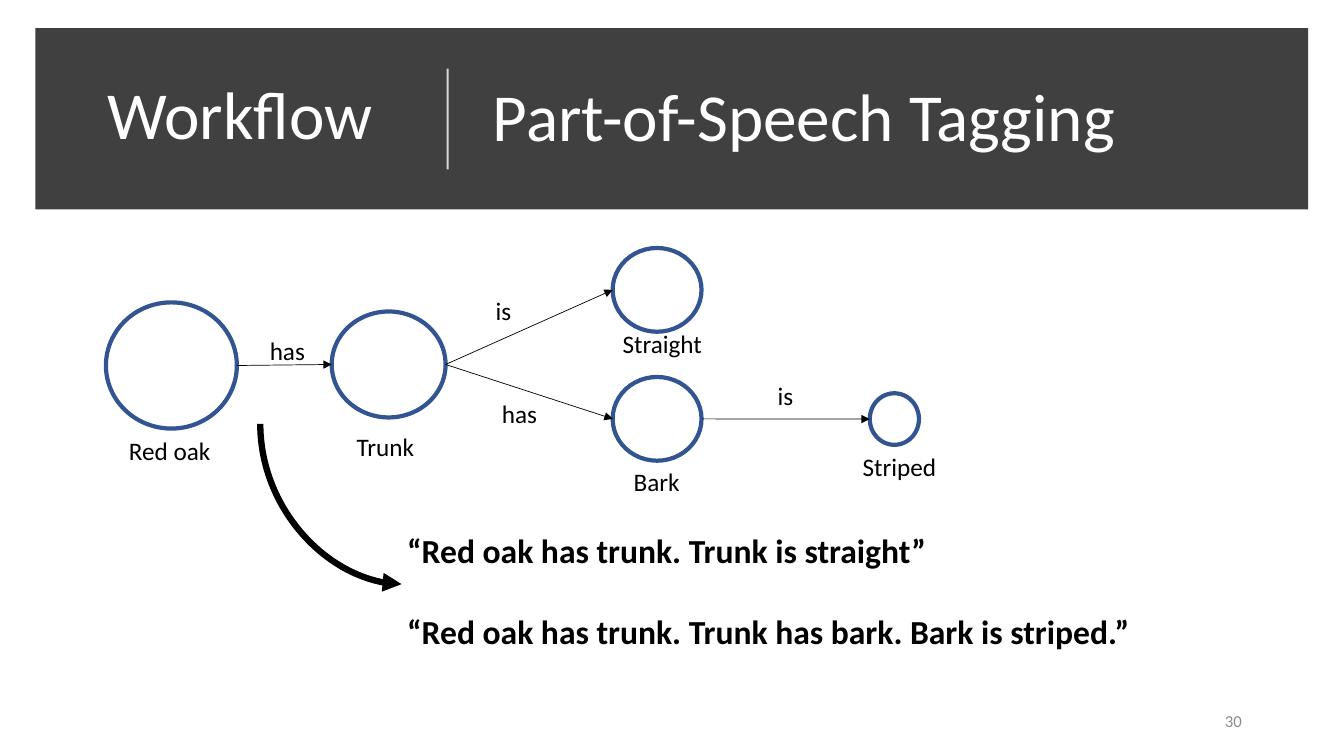
from lxml.etree import SubElement
from pptx import Presentation
from pptx.dml.color import RGBColor
from pptx.enum.shapes import MSO_CONNECTOR as Link, MSO_SHAPE as Shape
from pptx.enum.text import MSO_ANCHOR as Anchor, MSO_AUTO_SIZE as AutoSize, PP_ALIGN as Align
from pptx.oxml.ns import qn
from pptx.util import Cm, Pt

BLACK = RGBColor(0x00, 0x00, 0x00)
WHITE = RGBColor(0xFF, 0xFF, 0xFF)
CHARCOAL = RGBColor(0x40, 0x40, 0x40)
GREY = RGBColor(0x8C, 0x8C, 0x8C)
BLUE = RGBColor(0x32, 0x54, 0x91)

NODES = {
    "Red oak": ((2.67, 7.62, 3.3, 3.18), (3.0, 10.85, 2.59)),
    "Trunk": ((8.36, 7.85, 2.87, 2.67), (8.74, 10.74, 1.98)),
    "Straight": ((15.44, 6.25, 2.24, 2.11), (15.44, 8.15, 2.54)),
    "Bark": ((15.44, 9.5, 2.24, 2.11), (15.72, 11.63, 1.68)),
    "Striped": ((21.92, 9.91, 1.24, 1.3), (21.49, 11.25, 2.39)),
}
RELATIONS = [
    ("Red oak", "has", "Trunk", (6.55, 8.33)),
    ("Trunk", "is", "Straight", (12.24, 7.32)),
    ("Trunk", "has", "Bark", (12.4, 9.91)),
    ("Bark", "is", "Striped", (19.35, 9.47)),
]
SENTENCES = [
    "“Red oak has trunk. Trunk is straight”",
    "“Red oak has trunk. Trunk has bark. Bark is striped.”",
]


def style_paragraph(paragraph, size, color, bold=False):
    """Apply the slide's typeface to a paragraph."""
    font = paragraph.font
    font.name, font.size, font.bold = "Calibri", Pt(size), bold
    font.color.rgb = color


def add_text(slide, text, box, size=18, color=BLACK, wrap=True, bold=False):
    """Add a text box with one paragraph per line and return its frame."""
    frame = slide.shapes.add_textbox(*map(Cm, box)).text_frame
    frame.word_wrap = wrap
    frame.text = text
    for paragraph in frame.paragraphs:
        style_paragraph(paragraph, size, color, bold)
    return frame


def add_line(slide, start, end, color, width, kind=Link.STRAIGHT, arrow=True):
    """Add a shadowless line, with an arrowhead at its end if wanted."""
    line = slide.shapes.add_connector(kind, *map(Cm, start + end))
    line.line.color.rgb = color
    line.line.width = Pt(width)
    if arrow:
        SubElement(line.line._get_or_add_ln(), qn("a:tailEnd"), type="triangle")
    SubElement(line.element.spPr, qn("a:effectLst"))
    return line


def add_header(slide):
    """Add the dark band with the section name, divider and title."""
    band = slide.shapes.add_shape(Shape.RECTANGLE, Cm(0.89), Cm(0.71), Cm(32.08), Cm(4.57))
    band.shadow.inherit = False
    band.fill.solid()
    band.fill.fore_color.rgb = CHARCOAL
    band.line.fill.background()

    title = slide.shapes.title
    band.element.addnext(title.element)
    title.left, title.top, title.width, title.height = map(Cm, (12.17, 1.27, 19.38, 3.51))
    title.text_frame.text = "Part-of-Speech Tagging"
    style_paragraph(title.text_frame.paragraphs[0], 48, WHITE)
    section = add_text(slide, "Workflow", (2.46, 1.22, 9, 3.51), 48, WHITE)
    for frame in (title.text_frame, section):
        frame.vertical_anchor = Anchor.MIDDLE
        frame.auto_size = AutoSize.NONE
        frame.paragraphs[0].alignment = Align.LEFT
        frame.paragraphs[0].line_spacing = 0.9

    divider = add_line(slide, (11.28, 4.27), (11.28, 1.73), WHITE, 1.5, arrow=False)
    color = divider.element.spPr.find(".//" + qn("a:srgbClr"))
    SubElement(color, qn("a:alpha"), val="80000")


def add_node(slide, name, circle, label):
    """Add a concept circle and its label."""
    concept = slide.shapes.add_shape(Shape.OVAL, *map(Cm, circle))
    concept.shadow.inherit = False
    concept.fill.background()
    concept.line.color.rgb = BLUE
    concept.line.width = Pt(3)
    add_text(slide, name, label + (1.02,), wrap=False)


def add_relation(slide, source, verb, target, label):
    """Add an arrow between two concepts with its verb."""
    left, top, width, height = NODES[source][0]
    end_left, end_top, _, end_height = NODES[target][0]
    start = (left + width, top + height / 2)
    add_line(slide, start, (end_left, end_top + end_height / 2), BLACK, 0.5)
    add_text(slide, verb, label + (2.11, 1.02))


def add_curved_arrow(slide):
    """Add the thick quarter-turn arrow leading to the sentences."""
    curve = add_line(slide, (10.36, 10.92), (6.32, 14.48), BLACK, 4.5, Link.CURVE)
    properties = curve.element.spPr
    properties.find(qn("a:xfrm")).set("rot", "16200000")
    properties.find(qn("a:prstGeom")).set("prst", "curvedConnector2")


def main():
    """Build and save the slide."""
    deck = Presentation()
    deck.slide_width, deck.slide_height = Cm(33.87), Cm(19.05)
    slide = deck.slides.add_slide(deck.slide_layouts[5])
    add_header(slide)
    for name, (circle, label) in NODES.items():
        add_node(slide, name, circle, label)
    for relation in RELATIONS:
        add_relation(slide, *relation)
    add_curved_arrow(slide)
    sentences = add_text(slide, "\n".join(SENTENCES), (10.01, 13.23, 20.8, 4.11), 24, bold=True)
    sentences.paragraphs[1].space_before = Pt(29.3)
    number = add_text(slide, "30", (23.93, 17.65, 7.62, 1.02), 12, GREY)
    number.vertical_anchor = Anchor.MIDDLE
    number.paragraphs[0].alignment = Align.RIGHT
    deck.save("out.pptx")


if __name__ == "__main__":
    main()
